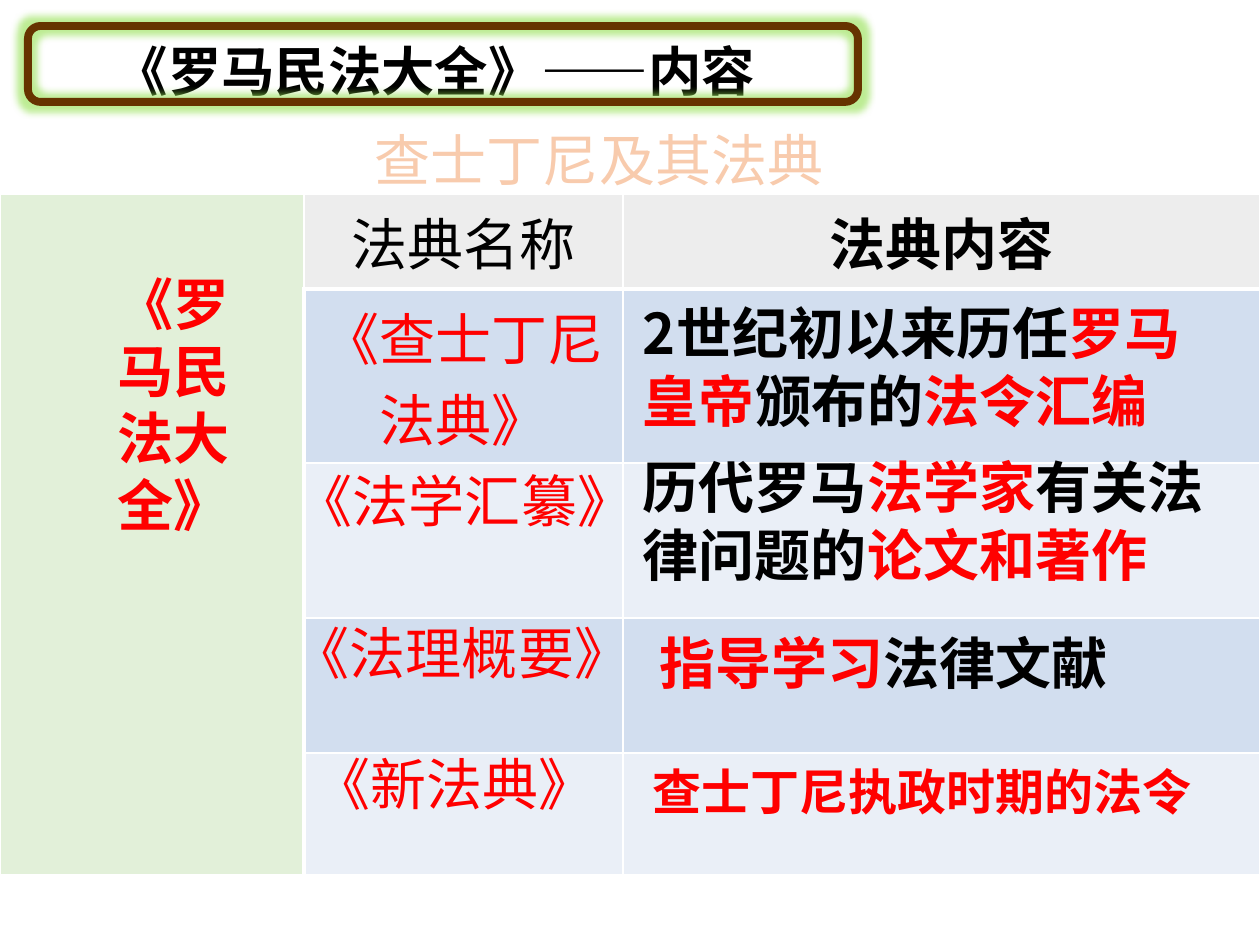
from lxml.etree import SubElement
from pptx import Presentation
from pptx.dml.color import RGBColor
from pptx.enum.shapes import MSO_SHAPE as Shape
from pptx.enum.text import MSO_ANCHOR as Anchor, MSO_AUTO_SIZE as AutoSize, PP_ALIGN as Align
from pptx.oxml.ns import qn
from pptx.util import Pt

FONT = "Noto Sans CJK SC"
COLORS = {
    "black": "000000", "red": "FF0000", "peach": "F8CBAD", "orange": "ED7D31",
    "brown": "663300", "glow": "92E04E", "white": "FFFFFF", "green": "E2F0D9",
    "gray": "EDEDED", "blue": "D2DEEF", "pale": "EAEFF7",
}

TITLE = ([("《罗马民法大全》——内容", "black")], (102, 26, 765, 77))
FRAME = (28, 26, 830, 76)

TABLE_AT = (0, 194)
COLUMNS = [304, 319, 637]
ROWS = [95, 174, 155, 135, 122]
ROW_FILLS = ["gray", "blue", "pale", "blue", "pale"]
CELL_TEXTS = {
    (0, 1): ("法典名称", "black", False),
    (0, 2): ("法典内容", "black", True),
    (1, 1): ("《查士丁尼法典》", "red", False),
}

# Spans as (text, colour), place in px, format
LABELS = [
    ([("2世纪初以来历任", "black"), ("罗马皇帝", "red"), ("颁布的", "black"),
      ("法令汇编", "red")], (630, 287, 605, 149), {"bold": True}),
    ([("历代罗马", "black"), ("法学家", "red"), ("有关法律问题的", "black"),
      ("论文和著作", "red")], (630, 441, 605, 149), {"bold": True}),
    ([("指导学习", "red"), ("法律文献", "black")], (646, 616, 673, 81), {"bold": True}),
    ([("查士丁尼执政时期的法令", "red")], (640, 750, 567, 72), {"bold": True, "size": 28}),
    ([("《罗马民法大全》", "red")], (82, 257, 183, 285),
     {"bold": True, "align": Align.CENTER}),
    ([("查士丁尼及其法典", "peach")], (362, 113, 478, 81),
     {"wrap": False, "outline": "orange"}),
    ([("《法学汇纂》", "red")], (284, 454, 364, 81), {"wrap": False}),
    ([("《法理概要》", "red")], (281, 607, 364, 81), {"wrap": False}),
    ([("《新法典》", "red")], (301, 737, 309, 81), {"wrap": False}),
]


def px(length):
    return round(length * 914400 / 126)


def place(place_px):
    return [px(length) for length in place_px]


def rgb(name):
    return RGBColor.from_string(COLORS[name])


def add_solid(parent, color):
    fill = SubElement(parent, qn("a:solidFill"))
    return SubElement(fill, qn("a:srgbClr"), val=COLORS[color])


def write(frame, spans, size=32, bold=False, align=Align.LEFT, outline=None, leading=None):
    para = frame.paragraphs[0]
    para.alignment = align
    if leading:
        para.line_spacing = Pt(round(size * leading, 1))
    for text, color in spans:
        span = para.add_run()
        span.text = text
        span.font.size = Pt(size)
        span.font.bold = bold
        span.font.name = FONT
        span.font.color.rgb = rgb(color)
        props = span.font._element
        SubElement(props, qn("a:ea"), typeface=FONT)
        if outline:
            line = SubElement(props, qn("a:ln"), w=str(Pt(1.75)))
            add_solid(line, outline)
            props.insert(0, line)


def fill_box(box, spans, wrap=True, **style):
    frame = box.text_frame
    frame.word_wrap = wrap
    frame.auto_size = AutoSize.SHAPE_TO_FIT_TEXT
    frame.vertical_anchor = Anchor.TOP
    frame.margin_left = frame.margin_right = px(13)
    frame.margin_top, frame.margin_bottom = px(12), 0
    write(frame, spans, leading=1.2, **style)


def set_borders(cell, row, column):
    """White rules: thick below the header row and beside the first column."""
    widths = {
        "L": 3 if column == 1 and row else 1,
        "R": 1,
        "T": 3 if row == 1 else 1,
        "B": 3 if row == 0 and column else 1,
    }
    props = cell._tc.get_or_add_tcPr()
    for index, (side, width) in enumerate(widths.items()):
        line = SubElement(props, qn(f"a:ln{side}"), w=str(Pt(width)))
        add_solid(line, "white")
        props.insert(index, line)


def add_code_table(page):
    shape = page.shapes.add_table(
        len(ROWS), len(COLUMNS), *place((*TABLE_AT, sum(COLUMNS), sum(ROWS))))
    table = shape.table
    for column, width in zip(table.columns, COLUMNS):
        column.width = px(width)
    for row, height in zip(table.rows, ROWS):
        row.height = px(height)
    for r, row_fill in enumerate(ROW_FILLS):
        for c in range(len(COLUMNS)):
            cell = table.cell(r, c)
            cell.fill.solid()
            cell.fill.fore_color.rgb = rgb(row_fill if c else "green")
            cell.vertical_anchor = Anchor.MIDDLE
            set_borders(cell, r, c)
            if (r, c) in CELL_TEXTS:
                text, color, bold = CELL_TEXTS[r, c]
                write(cell.text_frame, [(text, color)], bold=bold, align=Align.CENTER)
    table.cell(0, 0).merge(table.cell(len(ROWS) - 1, 0))


def add_title_frame(page):
    frame = page.shapes.add_shape(Shape.ROUNDED_RECTANGLE, *place(FRAME))
    frame.shadow.inherit = False
    frame.fill.background()
    frame.line.color.rgb = rgb("brown")
    frame.line.width = Pt(4.5)
    effects = frame._element.spPr.find(qn("a:effectLst"))
    glow = SubElement(effects, qn("a:glow"), rad=str(Pt(8)))
    tint = SubElement(glow, qn("a:srgbClr"), val=COLORS["glow"])
    SubElement(tint, qn("a:alpha"), val="60000")


def main():
    deck = Presentation()
    deck.slide_width, deck.slide_height = px(1260), px(945)
    page = deck.slides.add_slide(deck.slide_layouts[5])
    add_code_table(page)
    for spans, where, style in LABELS:
        fill_box(page.shapes.add_textbox(*place(where)), spans, **style)
    add_title_frame(page)
    title = page.shapes.title
    spans, where = TITLE
    title.left, title.top, title.width, title.height = place(where)
    fill_box(title, spans, size=30.5, bold=True)
    deck.save("out.pptx")


if __name__ == "__main__":
    main()
